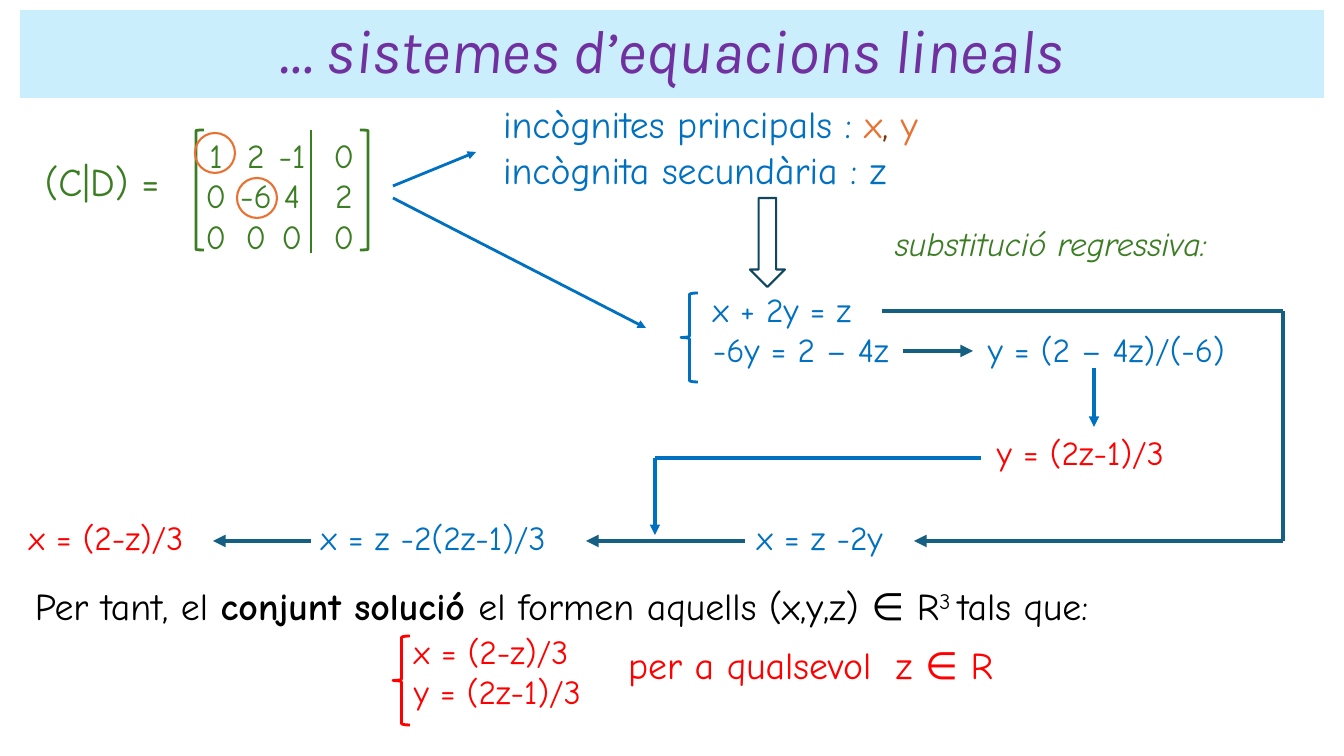
from lxml import etree
from pptx import Presentation, util as u
from pptx.dml.color import RGBColor
from pptx.enum import shapes, text
from pptx.oxml.ns import qn

PX = 914400 / 100.8  # EMU in one px

GREEN, BLUE, RED, ORANGE = "3B7D23", "0070C0", "FF0000", "E97132"
BROWN, BLACK, TEAL, NAVY = "80350E", "000000", "156082", "104760"
BODY_FONT, TITLE_FONT = "Comic Neue", "Karla"

# Content
TITLE = "… sistemes d’equacions lineals"
TITLE_BOX = (20, 10, 1304, 88)

MATRIX = [("1", "2", "-1", "0"), ("0", "-6", "4", "2"), ("0", "0", "0", "0")]
MATRIX_BOX = (200, 135, 180, 125)
MATRIX_TABS = (16, 56, 92, 144)

# (left, top, width, height), size, lines; a line is a list of (words, colour, style)
TEXTS = [
    ((45, 157, 140, 48), 28, [[("(C|D) =", GREEN, "")]]),
    ((503, 101, 510, 92), 27, [
        [("incògnites principals : ", BLUE, ""), ("x", ORANGE, ""),
         (", ", BROWN, ""), ("y", ORANGE, "")],
        [("incògnita secundària : z", BLUE, "")]]),
    ((713, 289, 240, 82), 24, [[("x + 2y = z", BLUE, "")],
                               [("-6y = 2 – 4z", BLUE, "")]]),
    ((988, 329, 290, 42), 24, [[("y = (2 – 4z)/(-6)", BLUE, "")]]),
    ((997, 432, 240, 42), 24, [[("y = (2z-1)/3", RED, "")]]),
    ((757, 517, 180, 42), 24, [[("x = z -2y", BLUE, "")]]),
    ((321, 517, 280, 42), 24, [[("x = z -2(2z-1)/3", BLUE, "")]]),
    ((29, 517, 200, 42), 24, [[("x = (2-z)/3", RED, "")]]),
    ((895, 223, 380, 42), 24, [[("substitució regressiva:", GREEN, "italic")]]),
    ((35, 583, 1290, 48), 27, [
        [("Per tant, el ", BLACK, ""), ("conjunt solució ", BLACK, "bold"),
         ("el formen aquells (x,y,z) ∈ R", BLACK, ""), ("3 ", BLACK, "super"),
         ("tals que:", BLACK, "")]]),
    ((414, 631, 220, 82), 24, [[("x = (2-z)/3", RED, "")],
                               [("y = (2z-1)/3", RED, "")]]),
    ((628, 642, 430, 48), 27, [[("per a qualsevol\tz ∈ R", RED, "")]]),
]
CONDITION_TAB = 268

# kind, (left, top, width, height), line colour, line width
OUTLINES = [
    ("LEFT_BRACKET", (196, 130, 8, 120), GREEN, 2),
    ("RIGHT_BRACKET", (360, 130, 8, 120), GREEN, 2),
    ("OVAL", (237, 178, 40, 40), ORANGE, 1.5),
    ("OVAL", (195, 133, 40, 40), ORANGE, 1.5),
    ("LEFT_BRACE", (681, 293, 17, 89), BLUE, 2),
    ("DOWN_ARROW", (750, 198, 35, 89), NAVY, 1.5),
    ("LEFT_BRACE", (393, 636, 17, 89), RED, 2),
]

# (from x, from y, to x, to y), colour, width, arrowhead
LINES = [
    ((311, 130, 311, 253), GREEN, 2, False),
    ((393, 186, 476, 152), BLUE, 2, True),
    ((393, 198, 646, 328), BLUE, 2, True),
    ((903, 351, 973, 351), TEAL, 3, True),
    ((1094, 368, 1094, 427), BLUE, 2.5, True),
    ((882, 311, 1283, 311), TEAL, 3, False),
    ((1283, 311, 1283, 541), TEAL, 3, False),
    ((1283, 541, 914, 541), TEAL, 3, True),
    ((745, 541, 586, 541), TEAL, 3, True),
    ((655, 458, 655, 535), BLUE, 2.5, True),
    ((655, 458, 981, 458), BLUE, 2.5, False),
    ((311, 541, 213, 541), TEAL, 3, True),
]


def px(*lengths):
    return [u.Emu(round(length * PX)) for length in lengths]


def rgb(colour):
    return RGBColor.from_string(colour)


def set_tabs(paragraph, stops, align):
    tab_list = etree.Element(qn("a:tabLst"))
    for stop in px(*stops):
        etree.SubElement(tab_list, qn("a:tab"), pos=str(stop), algn=align)
    paragraph._p.get_or_add_pPr().insert(0, tab_list)


def add_text(slide, box, size, lines):
    frame = slide.shapes.add_textbox(*px(*box)).text_frame
    frame.word_wrap = True
    frame.margin_left = frame.margin_right = frame.margin_top = frame.margin_bottom = 0
    for index, line in enumerate(lines):
        paragraph = frame.add_paragraph() if index else frame.paragraphs[0]
        paragraph.font.name = BODY_FONT
        paragraph.font.size = u.Pt(size)
        for words, colour, style in line:
            run = paragraph.add_run()
            run.text = words
            run.font.color.rgb = rgb(colour)
            if style == "bold":
                run.font.bold = True
            elif style == "italic":
                run.font.italic = True
            elif style == "super":
                run.font._element.set("baseline", "30000")
    return frame.paragraphs


def add_outline(slide, kind, box, colour, width):
    shape = slide.shapes.add_shape(getattr(shapes.MSO_SHAPE, kind), *px(*box))
    shape.shadow.inherit = False
    shape.fill.background()
    shape.line.color.rgb = rgb(colour)
    shape.line.width = u.Pt(width)


def add_line(slide, ends, colour, width, arrowhead):
    connector = slide.shapes.add_connector(shapes.MSO_CONNECTOR.STRAIGHT, *px(*ends))
    connector.line.color.rgb = rgb(colour)
    connector.line.width = u.Pt(width)
    if arrowhead:
        etree.SubElement(connector.line._get_or_add_ln(), qn("a:tailEnd"), type="triangle")
    etree.SubElement(connector._element.spPr, qn("a:effectLst"))


def add_title(slide):
    title = slide.shapes.title
    title.left, title.top, title.width, title.height = px(*TITLE_BOX)
    title.fill.solid()
    title.fill.fore_color.rgb = rgb("CAEEFB")
    title.text_frame.text = TITLE
    title.text_frame.vertical_anchor = text.MSO_ANCHOR.MIDDLE
    paragraph = title.text_frame.paragraphs[0]
    paragraph.alignment = text.PP_ALIGN.CENTER
    paragraph.line_spacing = 0.9
    paragraph.font.name = TITLE_FONT
    paragraph.font.size = u.Pt(44)
    paragraph.font.italic = True
    paragraph.font.color.rgb = rgb("7030A0")


def main():
    presentation = Presentation()
    presentation.slide_width, presentation.slide_height = px(1344, 756)
    slide = presentation.slides.add_slide(presentation.slide_layouts[5])
    add_title(slide)

    # Matrix, one centred tab stop per column
    rows = [[("\t" + "\t".join(row), GREEN, "")] for row in MATRIX]
    for paragraph in add_text(slide, MATRIX_BOX, 24, rows):
        set_tabs(paragraph, MATRIX_TABS, "ctr")

    # Equations and sentences; the last one sets its condition apart
    for box, size, lines in TEXTS:
        paragraphs = add_text(slide, box, size, lines)
    set_tabs(paragraphs[0], [CONDITION_TAB], "l")

    # Brackets, pivots and arrows
    for outline in OUTLINES:
        add_outline(slide, *outline)
    for line in LINES:
        add_line(slide, *line)

    presentation.save("out.pptx")


if __name__ == "__main__":
    main()
